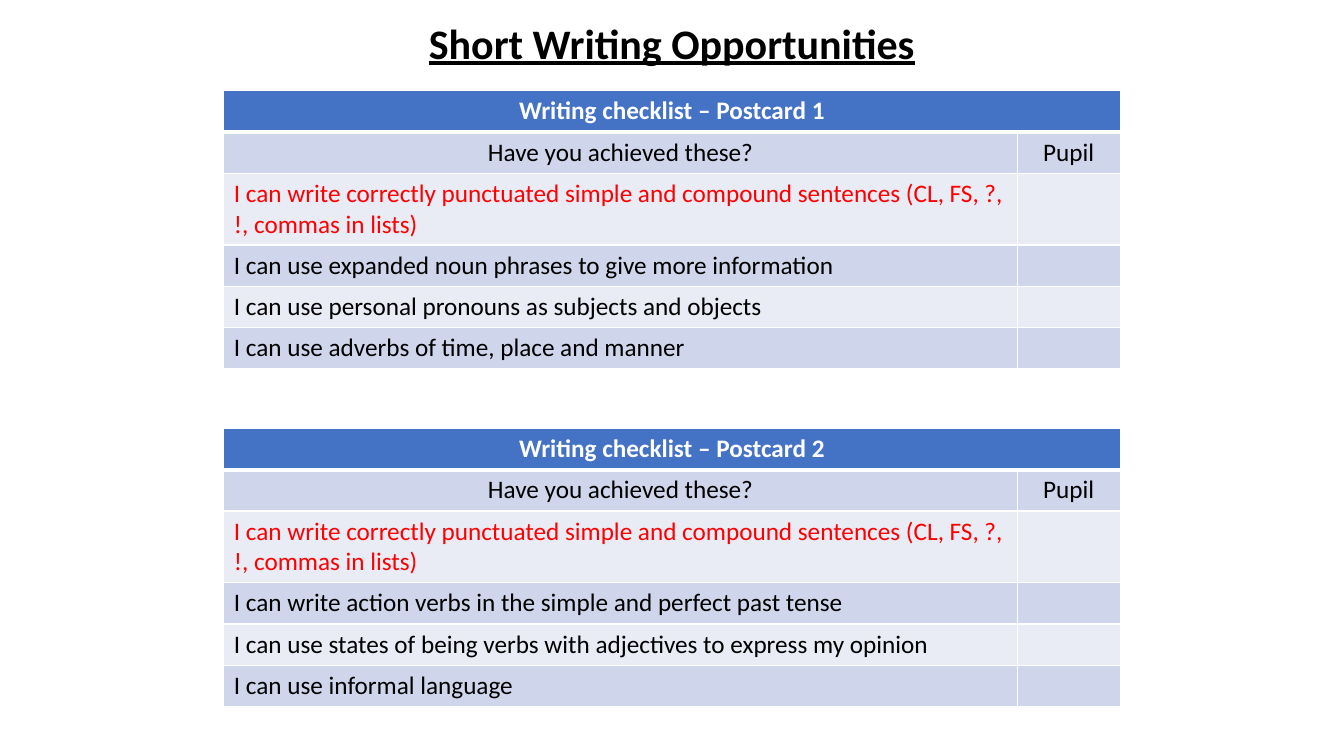
from lxml.etree import SubElement
from pptx import Presentation
from pptx.dml.color import RGBColor
from pptx.enum.text import PP_ALIGN as Align
from pptx.oxml.ns import qn
from pptx.util import Inches, Pt

THEME = {
    "font": "Calibri",
    "title_size": 30,
    "body_size": 18,
    "black": "000000",
    "white": "FFFFFF",
    "red": "FF0000",
    "header": "4472C4",
    "bands": ("E9EBF5", "CFD5EA"),
    "thin": 1,
    "thick": 3,
}

TABLE_LEFT = 2.22
TABLE_TOPS = (0.9, 4.25)
COLUMN_WIDTHS = (7.87, 1.02)
ROW_HEIGHT = 0.41

SENTENCES = ("I can write correctly punctuated simple and compound sentences "
             "(CL, FS, ?, !, commas in lists)")
CHECKLISTS = {
    "Writing checklist – Postcard 1": (
        "I can use expanded noun phrases to give more information",
        "I can use personal pronouns as subjects and objects",
        "I can use adverbs of time, place and manner",
    ),
    "Writing checklist – Postcard 2": (
        "I can write action verbs in the simple and perfect past tense",
        "I can use states of being verbs with adjectives to express my opinion",
        "I can use informal language",
    ),
}


def write(frame, text, size=THEME["body_size"], color=THEME["black"],
          align=Align.LEFT, bold=False, underline=False):
    paragraph = frame.paragraphs[0]
    paragraph.alignment = align
    run = paragraph.add_run()
    run.text = text
    font = run.font
    font.name, font.size = THEME["font"], Pt(size)
    font.bold, font.underline = bold, underline
    font.color.rgb = RGBColor.from_string(color)


def paint_cell(cell, fill, top, bottom):
    """Draw the white borders, then the fill: the order the schema asks for."""
    properties = cell._tc.get_or_add_tcPr()
    widths = {"lnL": THEME["thin"], "lnR": THEME["thin"], "lnT": top, "lnB": bottom}
    for side, width in widths.items():
        line = SubElement(properties, qn(f"a:{side}"), w=str(Pt(width)))
        solid = SubElement(line, qn("a:solidFill"))
        SubElement(solid, qn("a:srgbClr"), val=THEME["white"])
    cell.fill.solid()
    cell.fill.fore_color.rgb = RGBColor.from_string(fill)


presentation = Presentation()
presentation.slide_width, presentation.slide_height = Inches(13.33), Inches(7.5)
slide = presentation.slides.add_slide(presentation.slide_layouts[6])

for top, (heading, goals) in zip(TABLE_TOPS, CHECKLISTS.items()):
    rows = [(heading, ""), ("Have you achieved these?", "Pupil"), (SENTENCES, "")]
    rows += [(goal, "") for goal in goals]
    table = slide.shapes.add_table(
        len(rows), len(COLUMN_WIDTHS), Inches(TABLE_LEFT), Inches(top),
        Inches(sum(COLUMN_WIDTHS)), Inches(ROW_HEIGHT * len(rows))).table
    for column, width in zip(table.columns, COLUMN_WIDTHS):
        column.width = Inches(width)
    table.cell(0, 0).merge(table.cell(0, 1))

    for row_index, texts in enumerate(rows):
        is_header = row_index == 0
        fill = THEME["header"] if is_header else THEME["bands"][row_index % 2]
        if row_index in (1, 3, 5):
            fill = THEME["bands"][1]
        color = {0: THEME["white"], 2: THEME["red"]}.get(row_index, THEME["black"])
        for column_index, text in enumerate(texts):
            cell = table.cell(row_index, column_index)
            paint_cell(cell, fill,
                       top=THEME["thick" if row_index == 1 else "thin"],
                       bottom=THEME["thick" if is_header else "thin"])
            if text:
                write(cell.text_frame, text, color=color, bold=is_header,
                      align=Align.CENTER if row_index < 2 else Align.LEFT)

title = slide.shapes.add_textbox(Inches(1.81), Inches(0.12), Inches(9.71), Inches(0.61))
title.text_frame.word_wrap = True
write(title.text_frame, "Short Writing Opportunities", size=THEME["title_size"],
      align=Align.CENTER, bold=True, underline=True)

presentation.save("out.pptx")
